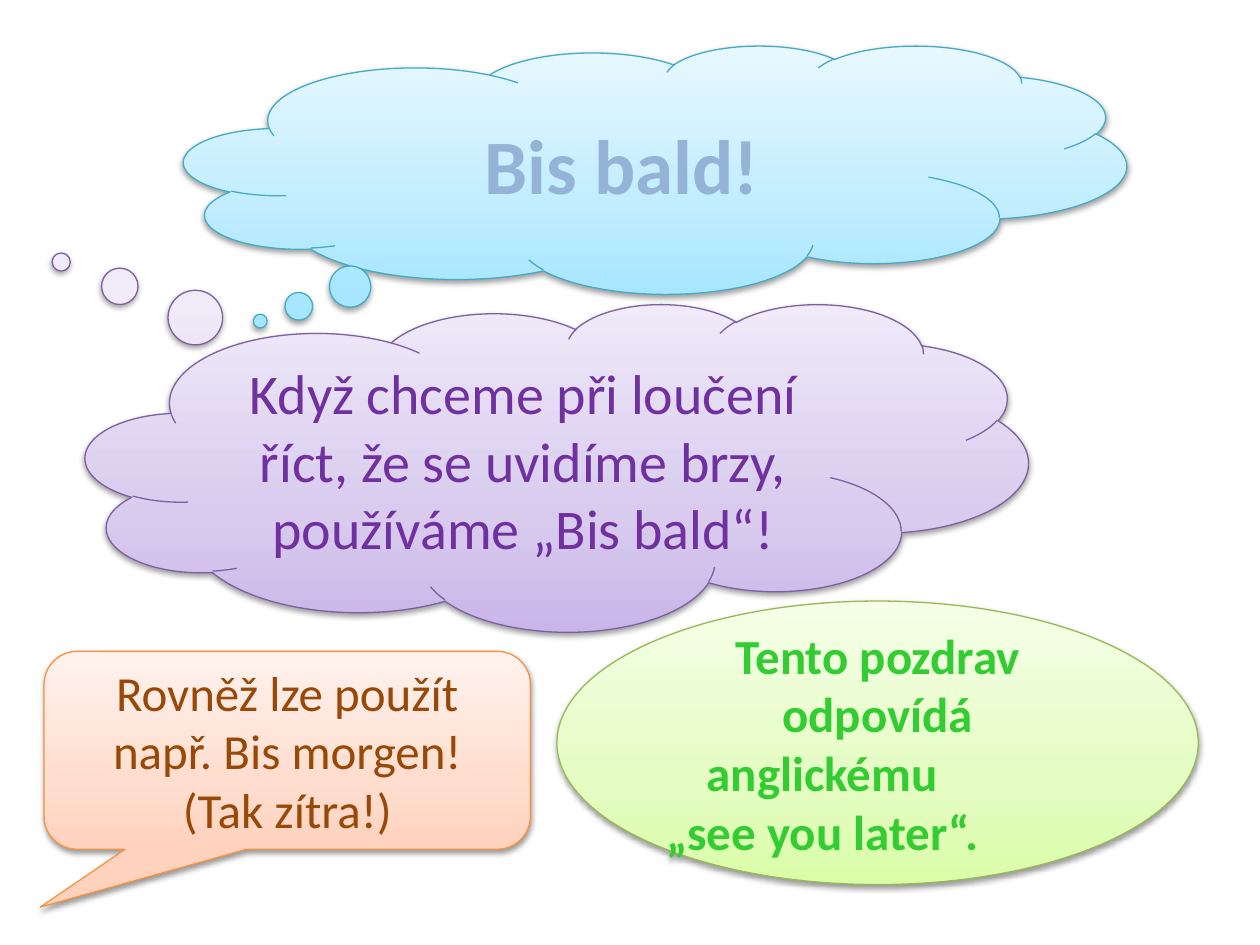
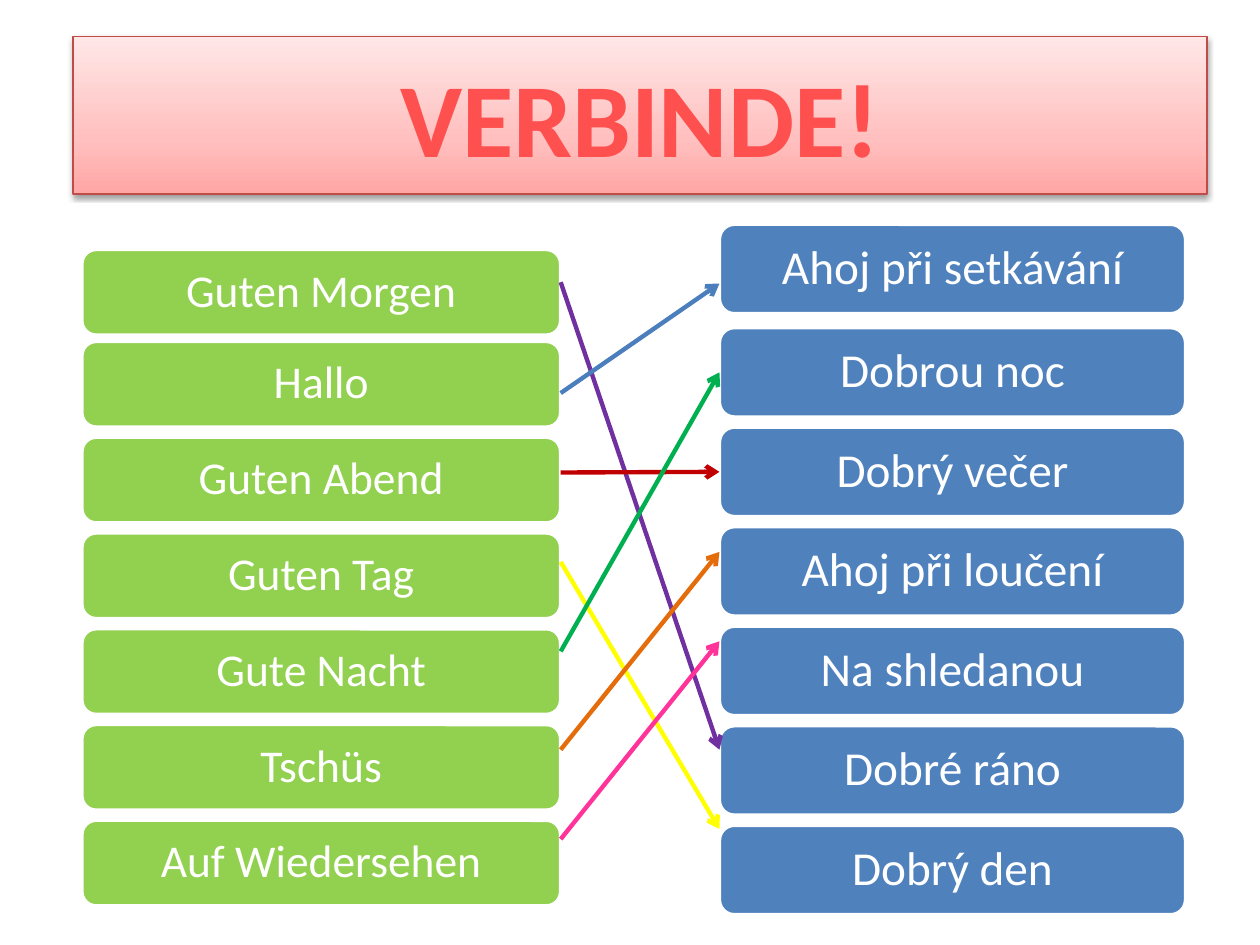
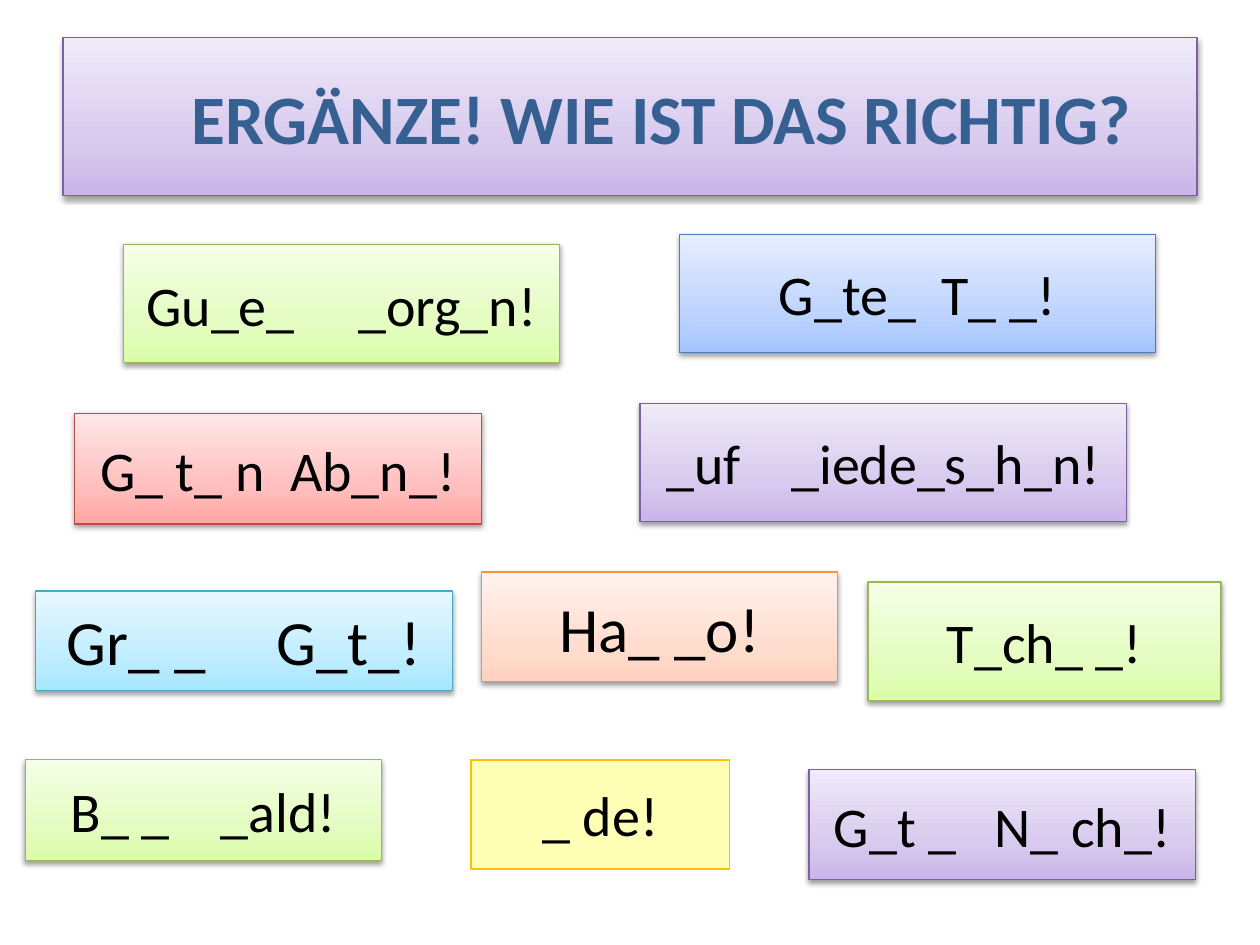
from copy import deepcopy

from lxml import etree
from pptx import Presentation
from pptx.dml.color import RGBColor
from pptx.enum.shapes import MSO_CONNECTOR, MSO_SHAPE
from pptx.enum.text import MSO_ANCHOR, PP_ALIGN
from pptx.oxml.ns import qn
from pptx.util import Inches, Pt

RECT = MSO_SHAPE.RECTANGLE
ROUND_RECT = MSO_SHAPE.ROUNDED_RECTANGLE
CLOUD = MSO_SHAPE.CLOUD_CALLOUT
OVAL = MSO_SHAPE.OVAL
SPEECH = MSO_SHAPE.ROUNDED_RECTANGULAR_CALLOUT
STRAIGHT = MSO_CONNECTOR.STRAIGHT
CENTER = PP_ALIGN.CENTER
MIDDLE = MSO_ANCHOR.MIDDLE
LEFT_SIDE = 1

FONT = "Calibri"
COLORS = {
    "black": "000000", "white": "FFFFFF", "pale_blue": "95B3D7",
    "violet": "7030A0", "bright_green": "33CC33", "brown": "984807",
    "coral": "FF5050", "navy": "376092", "lime": "92D050",
    "steel": "4F81BD", "blue": "4B7EBC", "dark_red": "C00000",
    "yellow": "FFFF00", "green": "00B050", "orange": "E46C0A",
    "pink": "FF3399", "cream": "FFFF99", "gold": "FFC000",
}
GRADIENTS = {
    "aqua": ("A7E6FF", "C1EDFF", "E7F8FF", "46AAC5"),
    "purple": ("C9B5E8", "D8CBEE", "F0EAF9", "7D60A0"),
    "green": ("DAFDA7", "E4FCC2", "F5FFE7", "98B955"),
    "orange": ("FFD2BD", "FFDED0", "FFF2ED", "F69240"),
    "red": ("FFA6A5", "FFC0BF", "FFE7E7", "BF4C48"),
    "blue": ("A4C4FF", "BFD4FF", "E6EEFF", "4B7EBC"),
}
STOPS = (0, 0.35, 1)
SPACE_WIDTH = 0.226


def rgb(name):
    return RGBColor.from_string(COLORS[name])


class Deck:
    def __init__(self):
        self.prs = Presentation()
        self.prs.slide_width = Inches(10)
        self.prs.slide_height = Inches(7.5)

    def new_slide(self):
        self.slide = self.prs.slides.add_slide(self.prs.slide_layouts[6])

    def shape(self, kind, box, adj=()):
        sp = self.slide.shapes.add_shape(kind, *map(Inches, box))
        sp.shadow.inherit = False
        for i, value in enumerate(adj):
            sp.adjustments[i] = value
        return sp

    def glossy(self, kind, box, style, adj=()):
        sp = self.shape(kind, box, adj)
        *shades, edge = GRADIENTS[style]
        sp.fill.gradient()
        sp.fill.gradient_angle = 90
        stop_list = sp._element.spPr.find(qn("a:gradFill")).find(qn("a:gsLst"))
        stop_list.append(deepcopy(stop_list[0]))
        for stop, position, shade in zip(sp.fill.gradient_stops, STOPS, shades):
            stop.position = position
            stop.color.rgb = RGBColor.from_string(shade)
        sp.line.color.rgb = RGBColor.from_string(edge)
        sp.line.width = Pt(0.75)
        effects = sp._element.spPr.find(qn("a:effectLst"))
        shadow = etree.SubElement(effects, qn("a:outerShdw"), blurRad="40000",
                                  dist="20000", dir="5400000", rotWithShape="0")
        color = etree.SubElement(shadow, qn("a:srgbClr"), val=COLORS["black"])
        etree.SubElement(color, qn("a:alpha"), val="38000")
        return sp

    def flat(self, kind, box, fill, edge, width, opacity=100):
        sp = self.shape(kind, box)
        sp.fill.solid()
        sp.fill.fore_color.rgb = rgb(fill)
        if opacity < 100:
            color = sp._element.spPr.find(qn("a:solidFill"))[0]
            etree.SubElement(color, qn("a:alpha"), val=str(opacity * 1000))
        sp.line.color.rgb = rgb(edge)
        sp.line.width = Pt(width)
        return sp

    def style_run(self, r, size, color, bold=False):
        r.font.name = FONT
        r.font.size = Pt(size)
        r.font.bold = bold
        r.font.color.rgb = rgb(color)

    def text(self, sp, lines, size, color, bold=False, spacing=None):
        tf = sp.text_frame
        tf.word_wrap = True
        tf.vertical_anchor = MIDDLE
        tf.text = lines
        for p in tf.paragraphs:
            p.alignment = CENTER
            p.line_spacing = spacing
            for r in p.runs:
                self.style_run(r, size, color, bold)

    def gap_text(self, sp, words, size, spaces):
        self.text(sp, words[0], size, "black")
        p = sp.text_frame.paragraphs[0]
        for part in (" ", *words[1:]):
            r = p.add_run()
            r.text = part
            self.style_run(r, size, "black")
        gap = (spaces - 1) * SPACE_WIDTH * size
        p.runs[1].font._element.set("spc", str(round(gap * 100)))

    def title(self, box, text, style, size, color):
        sp = self.glossy(RECT, box, style)
        self.text(sp, text, size, color, bold=True)
        return sp

    def column(self, words, left, width, height, tops, fill, size):
        boxes = []
        for word, top in zip(words, tops):
            sp = self.flat(ROUND_RECT, (left, top, width, height), fill, "white", 2)
            self.text(sp, word, size, "white", spacing=0.9)
            sp.text_frame.margin_left = sp.text_frame.margin_right = Inches(0.11)
            boxes.append(sp)
        return boxes

    def arrow(self, start, end, color, target=None):
        cx = self.slide.shapes.add_connector(STRAIGHT, *map(Inches, start + end))
        if target is not None:
            cx.end_connect(target, LEFT_SIDE)
        cx.line.color.rgb = rgb(color)
        cx.line.width = Pt(2.5)
        ln = cx._element.spPr.find(qn("a:ln"))
        etree.SubElement(ln, qn("a:tailEnd"), type="arrow")
        etree.SubElement(cx._element.spPr, qn("a:effectLst"))


def farewell_slide(deck):
    deck.new_slide()
    sp = deck.glossy(CLOUD, (1.46, 0.36, 7.48, 1.97), "aqua", (-0.419, 0.611))
    deck.text(sp, "Bis bald!", 44, "pale_blue", bold=True)
    sp = deck.glossy(CLOUD, (0.68, 2.41, 7.48, 2.6), "purple", (-0.526, -0.627))
    deck.text(sp, "Když chceme při loučení říct, že se uvidíme brzy, "
                  "používáme „Bis bald“!", 32, "violet")
    sp = deck.glossy(OVAL, (4.42, 4.77, 5.09, 2.25), "green")
    deck.text(sp, "Tento pozdrav odpovídá\nanglickému\n„see you later“.",
              28, "bright_green", bold=True)
    word = sp.text_frame.paragraphs[1]
    word._p.get_or_add_pPr().set("marR", str(Inches(0.88)))
    sp = deck.glossy(SPEECH, (0.35, 5.17, 3.86, 1.57), "orange",
                     (-0.508, 0.793, 0.167))
    deck.text(sp, "Rovněž lze použít např. Bis morgen!\n(Tak zítra!)", 28, "brown")


def matching_slide(deck):
    deck.new_slide()
    deck.title((0.58, 0.29, 9, 1.25), "VERBINDE!", "red", 60, "coral")
    german = ("Guten Morgen", "Hallo", "Guten Abend", "Guten Tag",
              "Gute Nacht", "Tschüs", "Auf Wiedersehen")
    czech = ("Ahoj při setkávání", "Dobrou noc", "Dobrý večer",
             "Ahoj při loučení", "Na shledanou", "Dobré ráno", "Dobrý den")
    german_tops = [1.98] + [2.71 + 0.76 * i for i in range(6)]
    czech_tops = [1.78] + [2.6 + 0.79 * i for i in range(6)]
    deck.column(german, 0.65, 3.8, 0.68, german_tops, "lime", 26)
    answers = deck.column(czech, 5.71, 3.7, 0.71, czech_tops, "steel", 27)
    for start, end, color, target in (
        (2.24, 5.95, "violet", None),
        (3.12, 2.25, "blue", None),
        (3.75, 3.75, "dark_red", answers[2]),
        (4.46, 6.58, "yellow", None),
        (5.17, 2.96, "green", answers[1]),
        (5.95, 4.38, "orange", None),
        (6.66, 5.09, "pink", None),
    ):
        deck.arrow((4.45, start), (5.71, end), color, target)


def gap_slide(deck):
    deck.new_slide()
    sp = deck.title((0.5, 0.3, 9, 1.25), "ERGÄNZE! WIE IST DAS RICHTIG?",
                    "purple", 39.6, "navy")
    sp.text_frame.margin_left = Inches(0.6)
    for box, style, words, size, spaces in (
        ((0.98, 1.94, 3.46, 0.94), "green", ("Gu_e_", "_org_n!"), 32, 5),
        ((5.08, 3.2, 3.86, 0.94), "purple", ("_uf", "_iede_s_h_n!"), 32, 4),
        ((0.28, 4.69, 3.31, 0.79), "aqua", ("Gr_ _", "G_t_!"), 36, 5),
        ((5.39, 1.86, 3.78, 0.94), "blue", ("G_te_", "T_ _!"), 32, 2),
        ((0.2, 6.03, 2.83, 0.8), "green", ("B_ _", "_ald!"), 32, 4),
        ((6.42, 6.11, 3.07, 0.87), "purple", ("G_t _", "N_ ch_!"), 32, 3),
        ((0.59, 3.28, 3.23, 0.88), "red", ("G_ t_ n", "Ab_n_!"), 32, 2),
    ):
        deck.gap_text(deck.glossy(RECT, box, style), words, size, spaces)
    for box, style, word, size in (
        ((6.89, 4.62, 2.8, 0.94), "green", "T_ch_ _!", 32),
        ((3.82, 4.54, 2.83, 0.87), "orange", "Ha_ _o!", 36),
    ):
        deck.text(deck.glossy(RECT, box, style), word, size, "black")
    sp = deck.flat(RECT, (3.74, 6.03, 2.05, 0.87), "cream", "gold", 1, opacity=71)
    deck.text(sp, "_ de!", 32, "black")


def main():
    deck = Deck()
    farewell_slide(deck)
    matching_slide(deck)
    gap_slide(deck)
    deck.prs.save("out.pptx")


if __name__ == "__main__":
    main()
